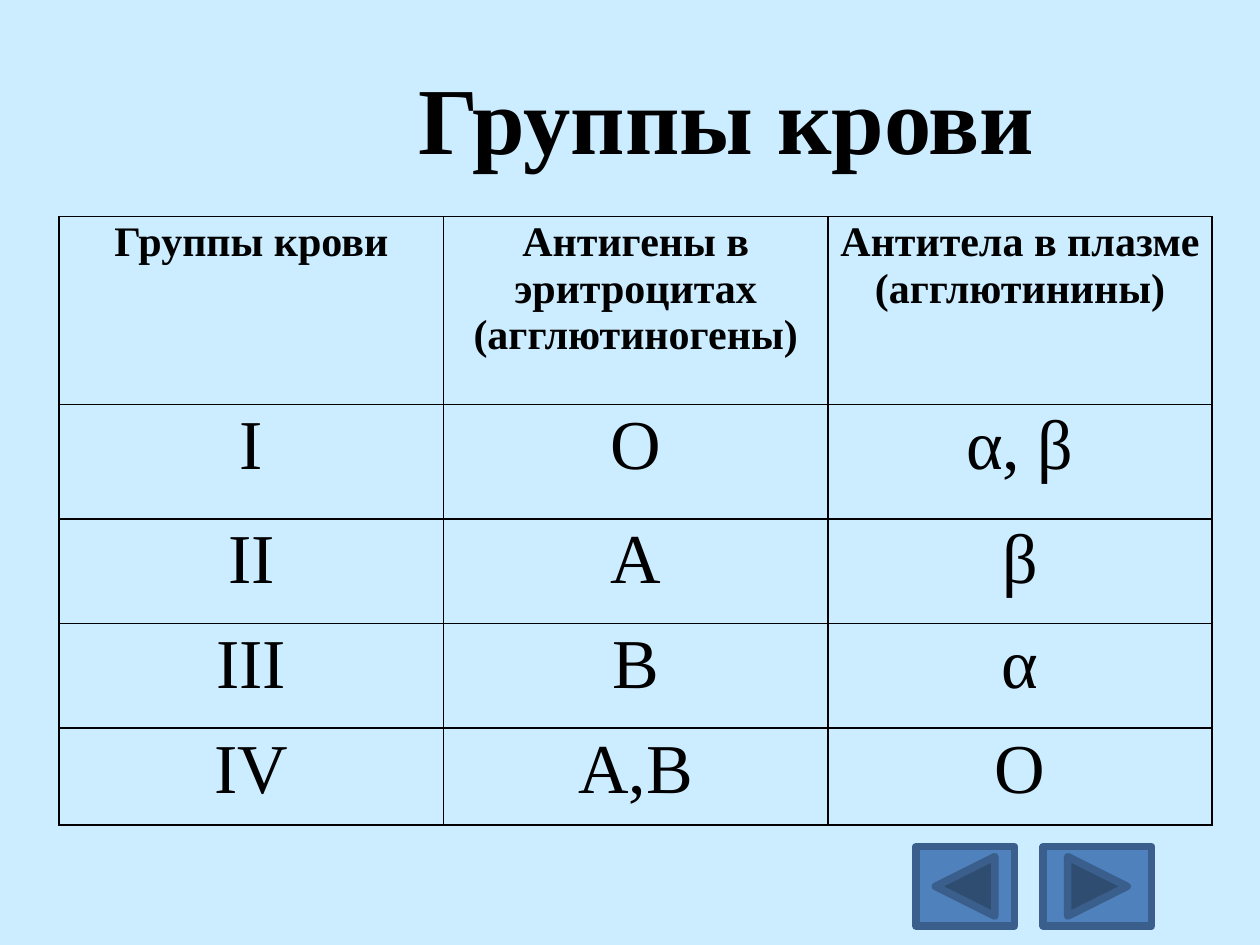
from lxml.etree import SubElement
from pptx import Presentation
from pptx.dml.color import RGBColor
from pptx.enum.shapes import MSO_SHAPE
from pptx.enum.text import MSO_ANCHOR, PP_ALIGN
from pptx.oxml.ns import qn
from pptx.util import Inches, Pt

COLORS = {
    "background": "CCECFF",
    "text": "000000",
    "border": "000000",
    "button": "4F81BD",
    "button_line": "3A5F8C",
}
FONT = "Times New Roman"
TITLE = "Группы крови"
ROWS = [
    ("Группы крови", "Антигены в эритроцитах (агглютиногены)", "Антитела в плазме (агглютинины)"),
    ("I", "О", "α, β"),
    ("II", "А", "β"),
    ("III", "В", "α"),
    ("IV", "А,В", "О"),
]
ROW_HEIGHTS = [1.49, 0.91, 0.83, 0.83, 0.77]
COLUMN_WIDTH = 3.05
BUTTON_TOP, BUTTON_HEIGHT = 6.72, 0.63
BUTTONS = [  # shape, left, width
    (MSO_SHAPE.ACTION_BUTTON_FORWARD_OR_NEXT, 8.28, 0.86),
    (MSO_SHAPE.ACTION_BUTTON_BACK_OR_PREVIOUS, 7.27, 0.78),
]


def color(name):
    return RGBColor.from_string(COLORS[name])


def write_text(text_frame, text, size, bold=False, align=PP_ALIGN.CENTER):
    text_frame.word_wrap = True
    paragraph = text_frame.paragraphs[0]
    paragraph.alignment = align
    run = paragraph.add_run()
    run.text = text
    run.font.name = FONT
    run.font.size = Pt(size)
    run.font.bold = bold
    run.font.color.rgb = color("text")


def add_borders(cell, width=1):
    """Draw all four cell borders; they must precede the fill in the XML."""
    properties = cell._tc.get_or_add_tcPr()
    for index, side in enumerate(("lnL", "lnR", "lnT", "lnB")):
        line = SubElement(properties, qn(f"a:{side}"), w=str(Pt(width)))
        fill = SubElement(line, qn("a:solidFill"))
        SubElement(fill, qn("a:srgbClr"), val=COLORS["border"])
        properties.insert(index, line)


def add_title(slide):
    title = slide.shapes.title
    title.left, title.top = Inches(2.03), Inches(0.3)
    title.width, title.height = Inches(7.47), Inches(1.25)
    title.text_frame.vertical_anchor = MSO_ANCHOR.MIDDLE
    write_text(title.text_frame, TITLE, size=54, bold=True)


def add_blood_table(slide):
    column_count = len(ROWS[0])
    table = slide.shapes.add_table(
        len(ROWS), column_count, Inches(0.47), Inches(1.72),
        Inches(COLUMN_WIDTH * column_count), Inches(sum(ROW_HEIGHTS)),
    ).table
    table.first_row = table.horz_banding = False
    for column in table.columns:
        column.width = Inches(COLUMN_WIDTH)
    for row_index, (row, texts) in enumerate(zip(table.rows, ROWS)):
        row.height = Inches(ROW_HEIGHTS[row_index])
        header = row_index == 0
        for cell, text in zip(row.cells, texts):
            cell.fill.background()
            cell.margin_left = cell.margin_right = Inches(0.02)
            cell.margin_top = cell.margin_bottom = Inches(0.02)
            add_borders(cell)
            write_text(cell.text_frame, text, size=24 if header else 40, bold=header)


def add_buttons(slide):
    for kind, left, width in BUTTONS:
        button = slide.shapes.add_shape(
            kind, Inches(left), Inches(BUTTON_TOP), Inches(width), Inches(BUTTON_HEIGHT)
        )
        button.shadow.inherit = False
        button.fill.solid()
        button.fill.fore_color.rgb = color("button")
        button.line.color.rgb = color("button_line")
        button.line.width = Pt(4.33)


def main():
    presentation = Presentation()
    presentation.slide_width, presentation.slide_height = Inches(10), Inches(7.5)
    slide = presentation.slides.add_slide(presentation.slide_layouts.get_by_name("Title Only"))
    slide.background.fill.solid()
    slide.background.fill.fore_color.rgb = color("background")
    add_blood_table(slide)
    add_title(slide)
    add_buttons(slide)
    presentation.save("out.pptx")


if __name__ == "__main__":
    main()
